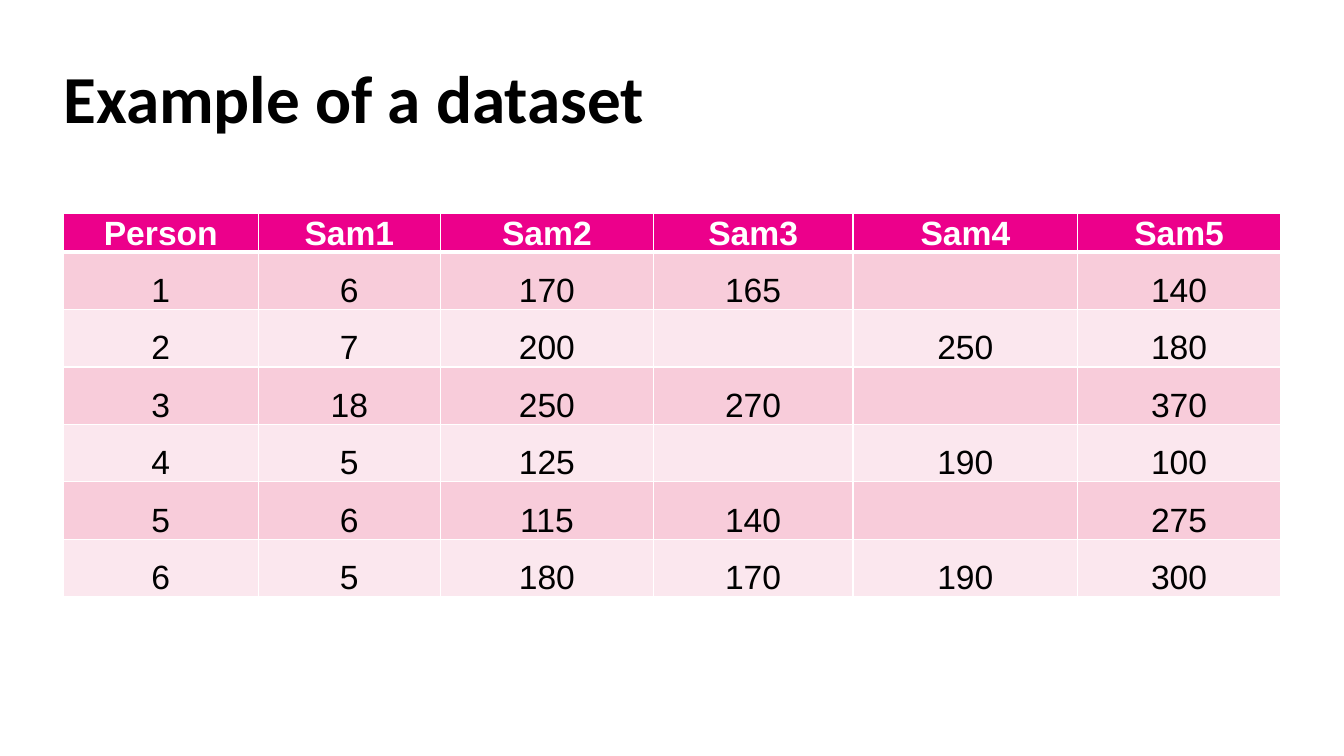
from lxml import etree
from pptx import Presentation
from pptx.dml.color import RGBColor
from pptx.enum.text import MSO_ANCHOR, MSO_AUTO_SIZE, PP_ALIGN
from pptx.oxml.ns import qn
from pptx.util import Inches, Pt

MIDDLE, BOTTOM = MSO_ANCHOR.MIDDLE, MSO_ANCHOR.BOTTOM
LEFT, CENTER = PP_ALIGN.LEFT, PP_ALIGN.CENTER
NO_FIT = MSO_AUTO_SIZE.NONE
TITLE_ONLY = 5

WHITE = RGBColor(0xFF, 0xFF, 0xFF)
BLACK = RGBColor(0x00, 0x00, 0x00)
PINK = RGBColor(0xEC, 0x00, 0x8B)
ROSE = RGBColor(0xF8, 0xCC, 0xDA)
BLUSH = RGBColor(0xFB, 0xE7, 0xEE)

WIDTHS = [1.93, 1.81, 2.11, 1.98, 2.23, 2.01]
HEAD_HIGH, ROW_HIGH = 0.35, 0.57
DATA = [
    ["Person", "Sam1", "Sam2", "Sam3", "Sam4", "Sam5"],
    ["1", "6", "170", "165", "", "140"],
    ["2", "7", "200", "", "250", "180"],
    ["3", "18", "250", "270", "", "370"],
    ["4", "5", "125", "", "190", "100"],
    ["5", "6", "115", "140", "", "275"],
    ["6", "5", "180", "170", "190", "300"],
]


def add_run(para, text, font, size, color, bold, align):
    para.alignment = align
    run = para.add_run()
    run.text = text
    run.font.name = font
    run.font.size = Pt(size)
    run.font.bold = bold
    run.font.color.rgb = color


def add_title(slide, text):
    title = slide.shapes.title
    title.left, title.top = Inches(0.63), Inches(0.65)
    title.width, title.height = Inches(12.07), Inches(0.56)
    frame = title.text_frame
    frame.auto_size = NO_FIT
    frame.word_wrap = True
    frame.vertical_anchor = MIDDLE
    frame.margin_left = frame.margin_right = frame.margin_bottom = 0
    frame.margin_top = Inches(0.05)
    add_run(frame.paragraphs[0], text, "Calibri", 48, BLACK, True, LEFT)


def add_edge(cell, tag, points):
    props = cell._tc.get_or_add_tcPr()
    line = etree.SubElement(props, qn(tag), w=str(Pt(points)))
    fill = etree.SubElement(line, qn("a:solidFill"))
    etree.SubElement(fill, qn("a:srgbClr"), val=str(WHITE))


def fill_cell(cell, text, row):
    head = row == 0
    # Borders come before the fill in the cell properties
    top = 3 if row == 1 else 1
    base = 3 if head else 1
    for tag, points in (("a:lnL", 1), ("a:lnR", 1), ("a:lnT", top), ("a:lnB", base)):
        add_edge(cell, tag, points)
    cell.fill.solid()
    cell.fill.fore_color.rgb = PINK if head else ROSE if row % 2 else BLUSH
    cell.vertical_anchor = BOTTOM
    cell.margin_left = cell.margin_right = cell.margin_top = Inches(0.01)
    cell.margin_bottom = 0
    if text:
        add_run(cell.text_frame.paragraphs[0], text, "Arial", 24,
                WHITE if head else BLACK, head, CENTER)


def add_grid(slide, data):
    high = HEAD_HIGH + ROW_HIGH * (len(data) - 1)
    table = slide.shapes.add_table(
        len(data), len(WIDTHS), Inches(0.63), Inches(2.12),
        Inches(sum(WIDTHS)), Inches(high)).table
    for col, width in zip(table.columns, WIDTHS):
        col.width = Inches(width)
    for row, texts in enumerate(data):
        table.rows[row].height = Inches(ROW_HIGH if row else HEAD_HIGH)
        for col, text in enumerate(texts):
            fill_cell(table.cell(row, col), text, row)


def main():
    deck = Presentation()
    deck.slide_width, deck.slide_height = Inches(13.33), Inches(7.5)
    slide = deck.slides.add_slide(deck.slide_layouts[TITLE_ONLY])
    add_title(slide, "Example of a dataset")
    add_grid(slide, DATA)
    deck.save("out.pptx")


if __name__ == "__main__":
    main()
